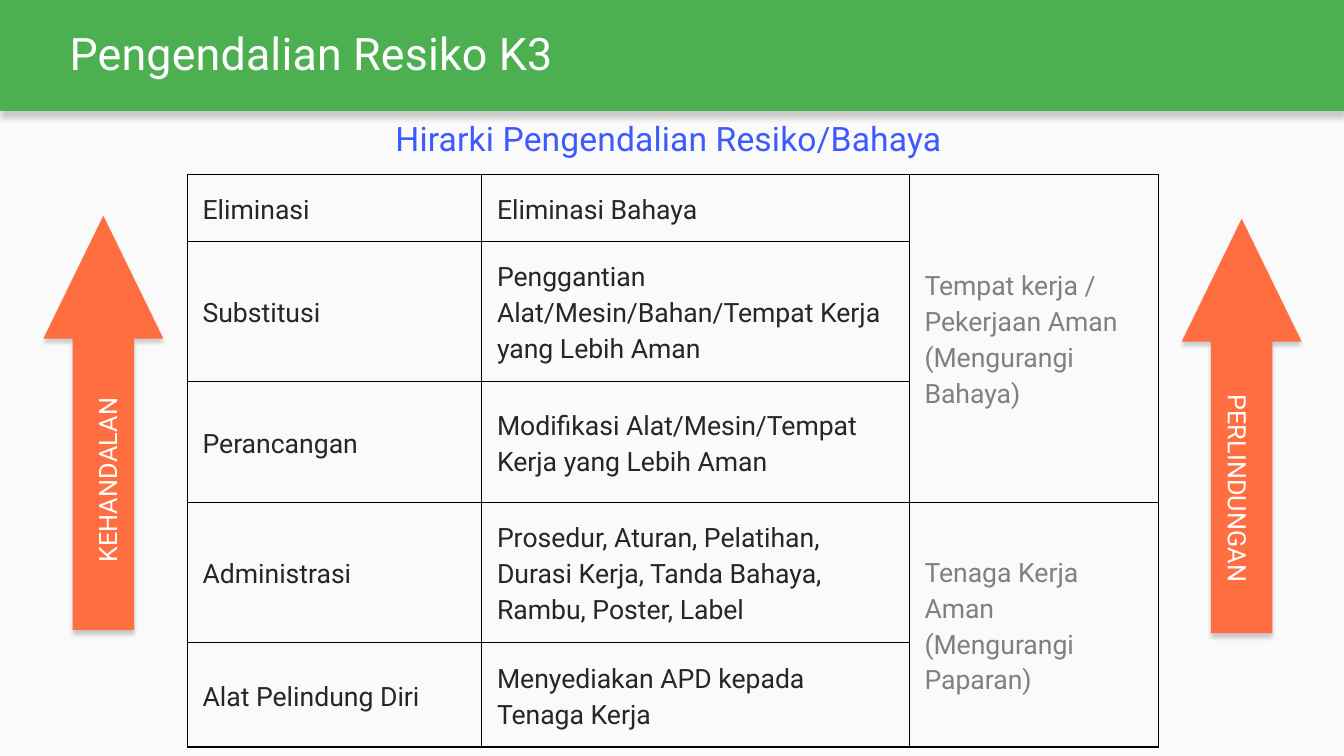
from lxml import etree
from pptx import Presentation
from pptx.dml.color import RGBColor
from pptx.enum.shapes import MSO_SHAPE
from pptx.enum.text import MSO_ANCHOR, MSO_AUTO_SIZE, PP_ALIGN
from pptx.oxml.ns import qn
from pptx.util import Inches, Pt

RECT = MSO_SHAPE.RECTANGLE
TOP, MIDDLE = MSO_ANCHOR.TOP, MSO_ANCHOR.MIDDLE
LEFT, CENTER = PP_ALIGN.LEFT, PP_ALIGN.CENTER
FIXED = MSO_AUTO_SIZE.NONE

FONT = "Roboto"
COLORS = {
    "page": "FAFAFA", "header": "4CAF50", "arrow": "FF6E40", "white": "FFFFFF",
    "heading": "3D5AFE", "text": "262626", "muted": "808080", "black": "000000",
}
COLS = [2.92, 4.24, 2.47]
ROWS = [0.73, 0.66, 1.39, 1.2, 1.39, 1.04]
HEADING = "Hirarki Pengendalian Resiko/Bahaya "
LEVELS = [
    ("Eliminasi", "Eliminasi Bahaya"),
    ("Substitusi", "Penggantian Alat/Mesin/Bahan/Tempat Kerja yang Lebih Aman"),
    ("Perancangan", "Modifikasi Alat/Mesin/Tempat Kerja yang Lebih Aman"),
    ("Administrasi", "Prosedur, Aturan, Pelatihan, Durasi Kerja, Tanda Bahaya, "
                     "Rambu, Poster, Label"),
    ("Alat Pelindung Diri", "Menyediakan APD kepada Tenaga Kerja"),
]
GOALS = [
    (1, 3, "Tempat kerja / Pekerjaan Aman (Mengurangi Bahaya)"),
    (4, 5, "Tenaga Kerja Aman (Mengurangi Paparan)"),
]


def color(name):
    return RGBColor.from_string(COLORS[name])


def write(frame, text, size, tint, align=LEFT, lines=None, track=None):
    """Fill the first paragraph of a frame with one run."""
    para = frame.paragraphs[0]
    para.alignment = align
    if lines:
        para.line_spacing = lines
    run = para.add_run()
    run.text = text
    run.font.name = FONT
    run.font.size = Pt(size)
    run.font.color.rgb = color(tint)
    if track:
        run.font._element.set("spc", str(track))


def pad(item, gap):
    item.margin_left = item.margin_right = Inches(gap)
    item.margin_top = item.margin_bottom = Inches(gap)


def paint(shape, tint, depth):
    """Give a shape a plain fill and a soft shadow below it."""
    shape.fill.solid()
    shape.fill.fore_color.rgb = color(tint)
    shape.line.fill.background()
    shape.shadow.inherit = False
    effects = shape._element.spPr.find(qn("a:effectLst"))
    cast = etree.SubElement(effects, qn("a:outerShdw"), blurRad=str(Pt(depth)),
                            dist=str(Pt(depth)), dir="5400000", rotWithShape="0")
    shade = etree.SubElement(cast, qn("a:srgbClr"), val=COLORS["black"])
    etree.SubElement(shade, qn("a:alpha"), val="20000")


def add_header(slide, x, y, w, h):
    band = slide.shapes.add_shape(RECT, Inches(x), Inches(y), Inches(w), Inches(h))
    paint(band, "header", 4.5)
    title = slide.shapes.title
    slide.shapes._spTree.append(title._element)
    title.left, title.top = Inches(x + 0.21), Inches(y + 0.26)
    title.width, title.height = Inches(w - 0.41), Inches(0.54)
    frame = title.text_frame
    frame.auto_size = FIXED
    frame.vertical_anchor = TOP
    pad(frame, 0)
    frame.margin_left = Inches(0.48)
    write(frame, "Pengendalian Resiko K3", 32, "white", track=10)


def add_arrow(slide, x, y, w, h):
    neck, inset = y + 1.22, 0.29
    points = [(x + w / 2, y), (x + w, neck), (x + w - inset, neck),
              (x + w - inset, y + h), (x + inset, y + h), (x + inset, neck),
              (x, neck)]
    spots = [(Inches(a), Inches(b)) for a, b in points]
    pen = slide.shapes.build_freeform(*spots[-1])
    pen.add_line_segments(spots[:-1], close=True)
    paint(pen.convert_to_shape(), "arrow", 3)


def add_label(slide, x, y, w, h, text, turn):
    box = slide.shapes.add_textbox(Inches(x), Inches(y), Inches(w), Inches(h))
    frame = box.text_frame
    frame.word_wrap = True
    pad(frame, 0)
    frame._txBody.bodyPr.set("vert", turn)
    write(frame, text, 18, "white", CENTER, Pt(25.3), 10)


def edge(cell, shown):
    """Draw the named sides of a cell and clear the others."""
    props = cell._tc.get_or_add_tcPr()
    for side in "LRTB":
        line = etree.SubElement(props, qn("a:ln" + side), w=str(Pt(1)))
        if side in shown:
            fill = etree.SubElement(line, qn("a:solidFill"))
            etree.SubElement(fill, qn("a:srgbClr"), val=COLORS["black"])
        else:
            etree.SubElement(line, qn("a:noFill"))


def add_levels(slide, x, y):
    frame = slide.shapes.add_table(len(ROWS), len(COLS), Inches(x), Inches(y),
                                   Inches(sum(COLS)), Inches(sum(ROWS)))
    table = frame.table
    table.first_row = table.horz_banding = False
    for col, width in zip(table.columns, COLS):
        col.width = Inches(width)
    for num, (row, height) in enumerate(zip(table.rows, ROWS)):
        row.height = Inches(height)
        for cell in row.cells:
            edge(cell, "LRTB" if num else "B")
            cell.fill.background()
            cell.vertical_anchor = MIDDLE
            pad(cell, 0.15)

    table.cell(0, 0).merge(table.cell(0, 2))
    write(table.cell(0, 0).text_frame, HEADING, 24, "heading", CENTER, Pt(31.1), 10)
    for num, level in enumerate(LEVELS, 1):
        for col, text in enumerate(level):
            write(table.cell(num, col).text_frame, text, 19, "text", lines=1.15)
    for first, last, text in GOALS:
        goal = table.cell(first, 2)
        goal.merge(table.cell(last, 2))
        write(goal.text_frame, text, 19, "muted", lines=1.15)


def main():
    deck = Presentation()
    deck.slide_width, deck.slide_height = Inches(13.33), Inches(7.5)
    slide = deck.slides.add_slide(deck.slide_layouts[5])
    slide.background.fill.solid()
    slide.background.fill.fore_color.rgb = color("page")

    add_arrow(slide, 11.72, 2.17, 1.19, 4.11)
    add_header(slide, 0, 0, 13.33, 1.1)
    add_arrow(slide, 0.43, 2.14, 1.19, 4.11)
    add_label(slide, 0.86, 3.64, 0.35, 2.25, "KEHANDALAN", "vert270")
    add_levels(slide, 1.86, 1)
    add_label(slide, 12.13, 3.51, 0.35, 2.67, "PERLINDUNGAN", "vert")
    deck.save("out.pptx")


if __name__ == "__main__":
    main()
